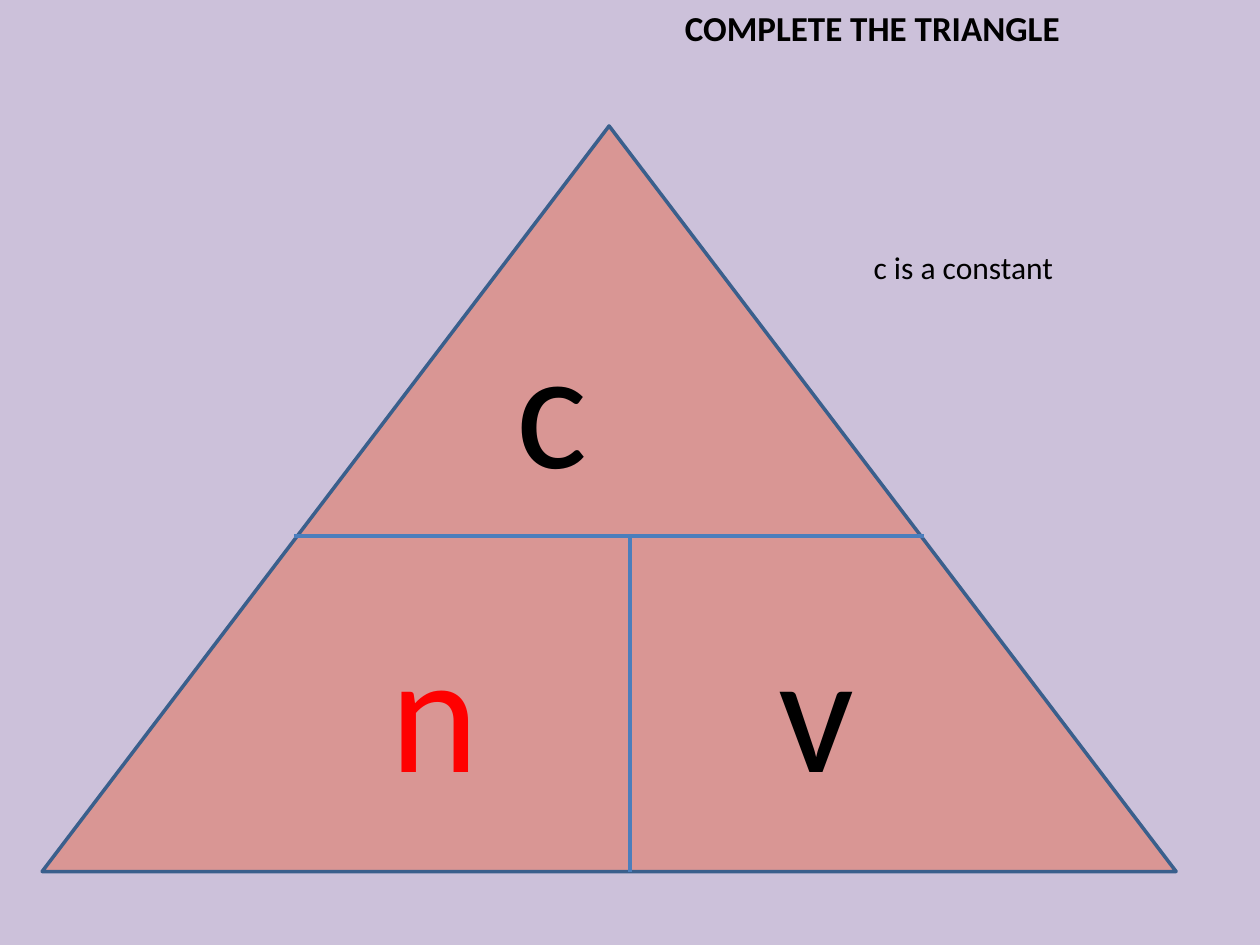
from dataclasses import dataclass

from lxml.etree import SubElement
from pptx import Presentation
from pptx.dml.color import RGBColor
from pptx.enum.shapes import MSO_CONNECTOR as Connector, MSO_SHAPE as Shape
from pptx.enum.text import MSO_ANCHOR as Anchor, MSO_AUTO_SIZE as AutoSize, PP_ALIGN as Align
from pptx.oxml.ns import qn
from pptx.util import Cm, Pt

LILAC = RGBColor(0xCC, 0xC1, 0xDA)
ROSE = RGBColor(0xD9, 0x96, 0x94)
OUTLINE_BLUE = RGBColor(0x3A, 0x5F, 0x8C)
DIVIDER_BLUE = RGBColor(0x4B, 0x7E, 0xBC)
BLACK = RGBColor(0, 0, 0)
RED = RGBColor(0xFF, 0, 0)

LINE_WIDTH = Pt(2)

# Triangle geometry in centimetres
TRIANGLE_LEFT, TRIANGLE_TOP = 0.85, 2.54
TRIANGLE_WIDTH, TRIANGLE_HEIGHT = 22.86, 15.03
TRIANGLE_BOTTOM = TRIANGLE_TOP + TRIANGLE_HEIGHT
DIVIDER_Y = 10.8
DIVIDER_X = 12.7


@dataclass(frozen=True)
class Label:
    text: str
    left: float
    top: float
    width: float
    height: float
    size: int
    color: RGBColor = BLACK
    bold: bool = False


@dataclass(frozen=True)
class Divider:
    start: tuple[float, float]
    end: tuple[float, float]


TITLE = Label("COMPLETE THE TRIANGLE", 13.55, 0, 11.85, 1.11, 20, bold=True)
LABELS = [
    Label("c", 10.16, 5.93, 4.23, 4.36, 96),
    Label("v", 15.45, 12.07, 4.23, 4.36, 96),
    Label("n", 7.62, 12.07, 4.23, 4.36, 96, RED),
    Label("c is a constant", 17.36, 4.87, 6.77, 1.03, 18),
]
DIVIDERS = [
    Divider((5.93, DIVIDER_Y), (18.63, DIVIDER_Y)),
    Divider((DIVIDER_X, TRIANGLE_BOTTOM), (DIVIDER_X, DIVIDER_Y)),
]


def write_label(shape, label: Label) -> None:
    """Fill a text box or placeholder with formatted text."""
    frame = shape.text_frame
    frame.text = label.text
    frame.word_wrap = True
    frame.auto_size = AutoSize.SHAPE_TO_FIT_TEXT
    frame.vertical_anchor = Anchor.TOP
    paragraph = frame.paragraphs[0]
    paragraph.alignment = Align.LEFT
    font = paragraph.runs[0].font
    formats = {"name": "Calibri", "size": Pt(label.size), "bold": label.bold}
    for name, value in formats.items():
        setattr(font, name, value)
    font.color.rgb = label.color


def draw_title(slide, label: Label) -> None:
    shape = slide.shapes.title
    for side in ("left", "top", "width", "height"):
        setattr(shape, side, Cm(getattr(label, side)))
    write_label(shape, label)


def draw_label(slide, label: Label) -> None:
    box = (label.left, label.top, label.width, label.height)
    write_label(slide.shapes.add_textbox(*map(Cm, box)), label)


def draw_triangle(slide) -> None:
    box = (TRIANGLE_LEFT, TRIANGLE_TOP, TRIANGLE_WIDTH, TRIANGLE_HEIGHT)
    shape = slide.shapes.add_shape(Shape.ISOSCELES_TRIANGLE, *map(Cm, box))
    shape.shadow.inherit = False
    shape.fill.solid()
    shape.fill.fore_color.rgb = ROSE
    shape.line.color.rgb = OUTLINE_BLUE
    shape.line.width = LINE_WIDTH


def draw_divider(slide, divider: Divider) -> None:
    ends = (*divider.start, *divider.end)
    line = slide.shapes.add_connector(Connector.STRAIGHT, *map(Cm, ends))
    line.line.color.rgb = DIVIDER_BLUE
    line.line.width = LINE_WIDTH
    SubElement(line._element.spPr, qn("a:effectLst"))  # no shadow


def main() -> None:
    presentation = Presentation()
    presentation.slide_width, presentation.slide_height = Cm(25.4), Cm(19.05)
    title_only = presentation.slide_layouts[5]
    slide = presentation.slides.add_slide(title_only)

    # Background and title
    slide.background.fill.solid()
    slide.background.fill.fore_color.rgb = LILAC
    draw_title(slide, TITLE)

    # Formula triangle with its dividers
    draw_triangle(slide)
    for divider in DIVIDERS:
        draw_divider(slide, divider)

    # Letters and note
    for label in LABELS:
        draw_label(slide, label)

    presentation.save("out.pptx")


if __name__ == "__main__":
    main()
